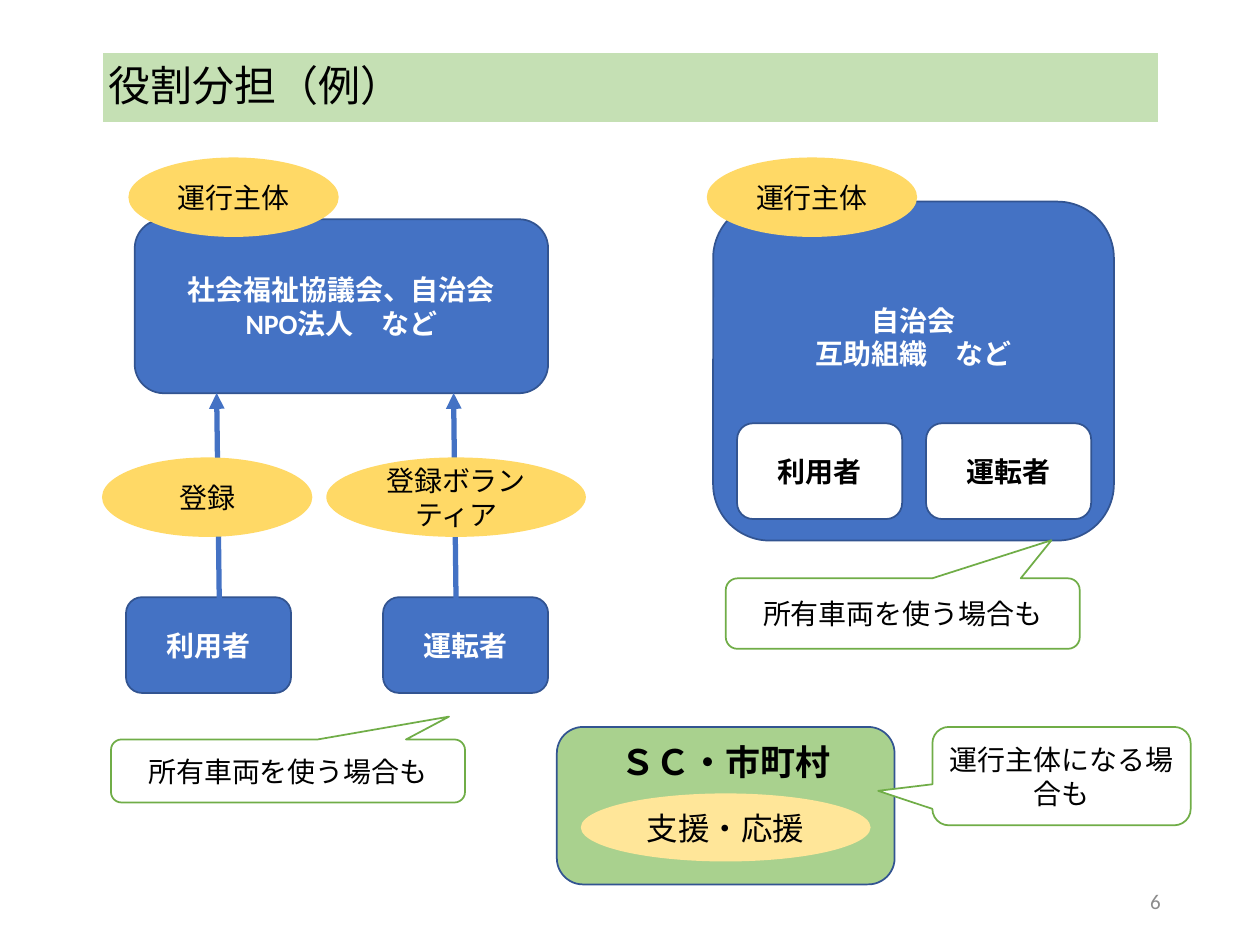
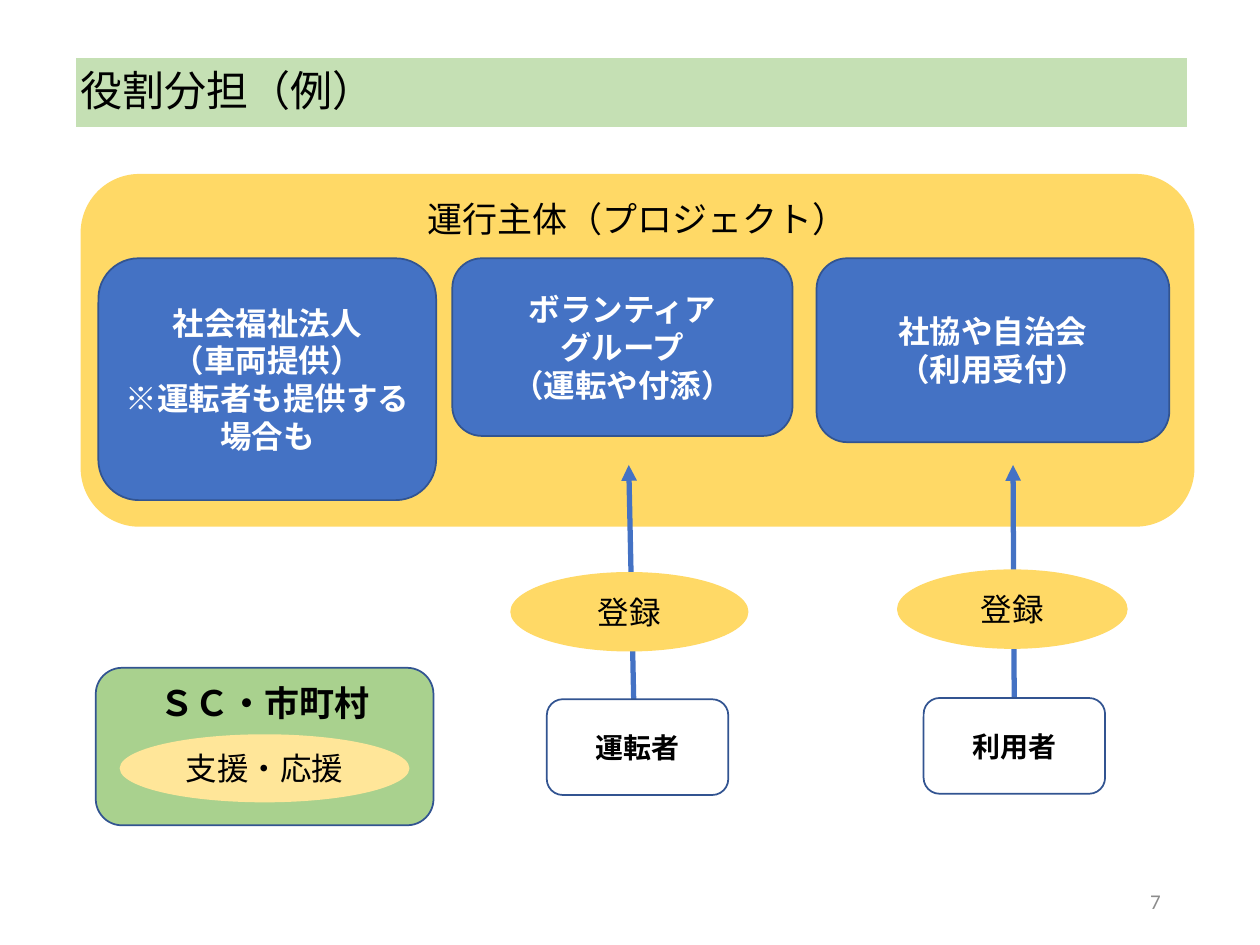
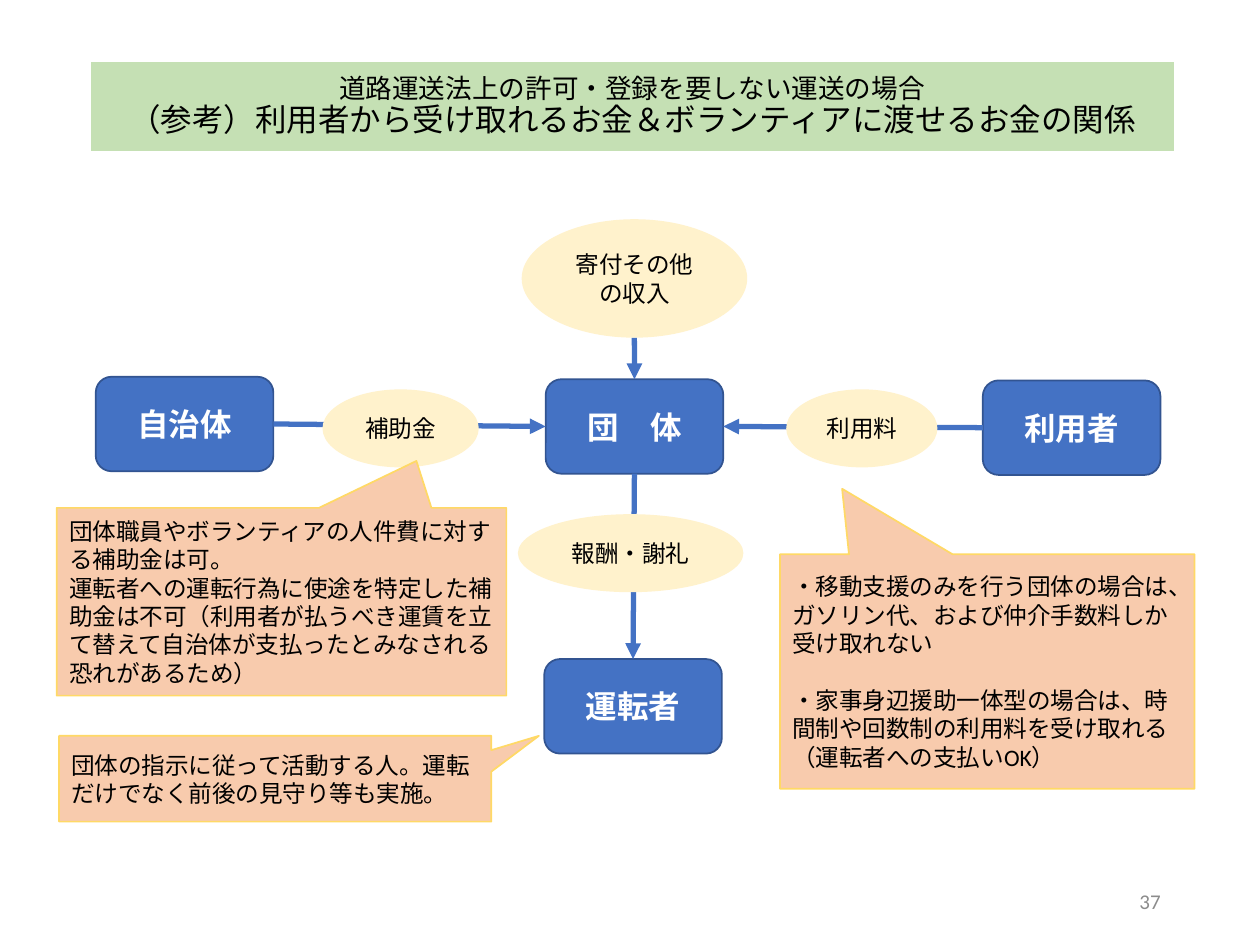
import dataclasses
import itertools
import typing

import lxml.etree
import pptx
import pptx.dml.color
import pptx.enum.lang
import pptx.enum.shapes
import pptx.enum.text
import pptx.oxml.ns
import pptx.util

Pt = pptx.util.Pt
Form = pptx.enum.shapes.MSO_SHAPE
Align = pptx.enum.text.PP_ALIGN
Anchor = pptx.enum.text.MSO_ANCHOR
Pair = tuple[float, float]


@dataclasses.dataclass(frozen=True)
class Look:
    form: typing.Optional[Form]
    fill: str = ""
    edge: str = ""
    weight: float = 1
    ink: str = "000000"
    bold: bool = False
    align: Align = Align.CENTER
    anchor: Anchor = Anchor.MIDDLE
    font: str = "Calibri"
    space: float = 1.0


@dataclasses.dataclass(frozen=True)
class Theme:
    blue: str = "4472C4"
    navy: str = "325491"
    mint: str = "C5E0B4"
    green: str = "A9D18E"
    leaf: str = "70AD47"
    gold: str = "FFD966"
    sand: str = "FFE699"
    cream: str = "FFF2CC"
    peach: str = "F8CBAD"
    white: str = "FFFFFF"
    gray: str = "8C8C8C"
    head: float = 24
    big: float = 20
    mid: float = 18
    sub: float = 15.2
    base: float = 16
    note: float = 13.5
    foot: float = 12
    arrow: float = 3
    face: str = "Noto Sans CJK JP"


T = Theme()
ROUND = Form.ROUNDED_RECTANGLE
BAND = Look(Form.RECTANGLE, T.mint, T.white, 1.5, align=Align.LEFT, font=T.face, space=0.9)
MID_BAND = dataclasses.replace(BAND, align=Align.CENTER)
FOOT = Look(None, ink=T.gray, align=Align.RIGHT)
BLUE = Look(ROUND, T.blue, T.navy, ink=T.white, bold=True)
WHITE = Look(ROUND, T.white, T.navy, bold=True)
GREEN = Look(ROUND, T.green, T.navy, bold=True, anchor=Anchor.TOP)
FIELD = Look(ROUND, T.gold, anchor=Anchor.TOP)
GOLD = Look(Form.OVAL, T.gold)
SAND = Look(Form.OVAL, T.sand)
CREAM = Look(Form.OVAL, T.cream)
BUBBLE = Look(Form.ROUNDED_RECTANGULAR_CALLOUT, T.white, T.leaf)
NOTE = Look(Form.RECTANGULAR_CALLOUT, T.peach, T.gold, align=Align.LEFT)

OVAL = (120.2, 45.4)
CARD = (94.3, 54.7)
SLOT = (103.7, 54.7)
NODE = (101.5, 54)
CAST = (193, 90)


@dataclasses.dataclass(frozen=True)
class Box:
    look: Look
    spot: Pair
    size: Pair
    text: str
    types: tuple[float, ...] = (T.base,)
    tip: tuple[float, ...] = ()
    pad: Pair = (7.2, 3.6)
    lift: float = 0
    gap: float = 0


@dataclasses.dataclass(frozen=True)
class Arrow:
    start: Pair
    end: Pair


def dress(item: typing.Any, vals: dict[str, typing.Any]) -> None:
    for key, val in vals.items():
        setattr(item, key, val)


def tint(code: str) -> pptx.dml.color.RGBColor:
    return pptx.dml.color.RGBColor.from_string(code)


def paint(shape: typing.Any, look: Look) -> None:
    shape.shadow.inherit = False
    shape.fill.solid()
    shape.fill.fore_color.rgb = tint(look.fill)
    if look.edge:
        shape.line.color.rgb = tint(look.edge)
        shape.line.width = Pt(look.weight)
    else:
        shape.line.fill.background()


def write(shape: typing.Any, box: Box) -> None:
    look = box.look
    frame = shape.text_frame
    side, rim = box.pad
    dress(frame, {
        "text": box.text,
        "word_wrap": True,
        "vertical_anchor": look.anchor,
        "margin_left": Pt(side),
        "margin_right": Pt(side),
        "margin_top": Pt(rim),
        "margin_bottom": Pt(rim + box.lift),
    })
    for row, (para, size) in enumerate(zip(frame.paragraphs, itertools.cycle(box.types))):
        dress(para, {
            "alignment": look.align,
            "line_spacing": look.space,
            "space_before": Pt(box.gap if row else 0),
        })
        for run in para.runs:
            run.font.color.rgb = tint(look.ink)
            dress(run.font, {
                "name": look.font,
                "size": Pt(size),
                "bold": look.bold,
                "language_id": pptx.enum.lang.MSO_LANGUAGE_ID.JAPANESE,
            })
            east = lxml.etree.SubElement(run._r.get_or_add_rPr(), pptx.oxml.ns.qn("a:ea"))
            east.set("typeface", look.font)


def draw(slide: typing.Any, box: Box) -> typing.Any:
    place = [Pt(val) for val in box.spot + box.size]
    if box.look.form is None:
        shape = slide.shapes.add_textbox(*place)
    else:
        shape = slide.shapes.add_shape(box.look.form, *place)
        paint(shape, box.look)
        for i, val in enumerate(box.tip):
            shape.adjustments[i] = val
    write(shape, box)
    return shape


def point(slide: typing.Any, arrow: Arrow) -> typing.Any:
    ends = [Pt(val) for val in arrow.start + arrow.end]
    link = slide.shapes.add_connector(pptx.enum.shapes.MSO_CONNECTOR.STRAIGHT, *ends)
    link.line.color.rgb = tint(T.blue)
    link.line.width = Pt(T.arrow)
    tail = lxml.etree.SubElement(link.line._get_or_add_ln(), pptx.oxml.ns.qn("a:tailEnd"))
    tail.set("type", "triangle")
    lxml.etree.SubElement(link._element.spPr, pptx.oxml.ns.qn("a:effectLst"))
    return link


def join(slide: typing.Any, first: typing.Any, out: int, last: typing.Any, into: int) -> None:
    link = point(slide, Arrow((0, 0), (0, 0)))
    link.begin_connect(first, out)
    link.end_connect(last, into)


def render(slide: typing.Any, parts: list[Box | Arrow]) -> None:
    for part in parts:
        if isinstance(part, Arrow):
            point(slide, part)
        else:
            draw(slide, part)


def open_page(deck: typing.Any, band: Box, number: int) -> typing.Any:
    slide = deck.slides.add_slide(deck.slide_layouts[6])
    draw(slide, band)
    draw(slide, Box(FOOT, (508.3, 500.4), (162, 28.8), str(number), (T.foot,)))
    return slide


def role_band(spot: Pair, width: float) -> Box:
    return Box(BAND, spot, (width, 41), "役割分担（例）", (T.head,), pad=(3.6, 1.4))


def support(left: float, top: float) -> list[Box]:
    return [
        Box(GREEN, (left, top), CAST, "ＳＣ・市町村", (T.big,)),
        Box(SAND, (left + 13.7, top + 38), (165.6, 38.9), "支援・応援", (T.mid,)),
    ]


def build_roles(deck: typing.Any) -> None:
    slide = open_page(deck, role_band((58.3, 29.5), 604), 6)
    owner, own_car = "運行主体", "所有車両を使う場合も"
    render(slide, [
        Box(BLUE, (77, 125.3), (236.2, 99.4), "社会福祉協議会、自治会\nNPO法人　など"),
        Box(GOLD, (73.4, 90), OVAL, owner),
        Box(BLUE, (218.9, 341.3), CARD, "運転者"),
        Box(BLUE, (72, 341.3), CARD, "利用者"),
        Arrow((260.6, 342.7), (259.2, 224.6)),
        Arrow((125.3, 342.7), (123.8, 224.6)),
        Box(GOLD, (58.3, 261.4), OVAL, "登録"),
        Box(GOLD, (186.5, 261.4), (148.3, 45.4), "登録ボランティア"),
        Box(BLUE, (407.5, 115.2), (229, 193.7), "自治会\n互助組織　など", lift=39),
        Box(GOLD, (403.9, 90), OVAL, owner),
        Box(WHITE, (529.2, 241.9), CARD, "運転者"),
        Box(WHITE, (421.2, 241.9), CARD, "利用者"),
        Box(BUBBLE, (63.4, 422.6), (202.3, 36), own_car, tip=(0.455, -0.863)),
        Box(BUBBLE, (414.7, 330.5), (202.3, 40.3), own_car, tip=(0.42, -1.04)),
        *support(318.2, 415.4),
        Box(BUBBLE, (532.8, 415.4), (147.6, 56.2), "運行主体になる場合も", tip=(-0.71, 0.15)),
    ])


def build_project(deck: typing.Any) -> None:
    slide = open_page(deck, role_band((42.5, 32.4), 636.5), 7)
    top, mid = 147.6, (T.mid,)
    render(slide, [
        Box(FIELD, (46.1, 99.4), (636.5, 201.6), "運行主体（プロジェクト）", (T.big,)),
        Box(BLUE, (56.2, top), (193, 138.2),
            "社会福祉法人\n（車両提供）\n※運転者も提供する場合も", mid),
        Box(BLUE, (258.5, top), (194.4, 101.5), "ボランティア\nグループ\n（運転や付添）", mid),
        Box(BLUE, (466.6, top), (201.6, 105.1), "社協や自治会\n（利用受付）", mid),
        Arrow((579.6, 407.5), (578.9, 265.7)),
        Box(GOLD, (512.6, 325.4), (131.8, 45.4), "登録", mid),
        Box(WHITE, (527.8, 398.9), SLOT, "利用者"),
        Arrow((362.2, 403.2), (359.3, 265.7)),
        Box(GOLD, (291.6, 326.9), (136.1, 45.4), "登録", mid),
        Box(WHITE, (312.5, 399.6), SLOT, "運転者"),
        *support(54.7, 381.6),
    ])


def build_money(deck: typing.Any) -> None:
    band = Box(
        MID_BAND, (51.1, 34.6), (620.6, 52.6),
        "道路運送法上の許可・登録を要しない運送の場合\n"
        "（参考）利用者から受け取れるお金＆ボランティアに渡せるお金の関係",
        (T.sub, T.mid), pad=(4.3, 2.2),
    )
    slide = open_page(deck, band, 37)
    note = (T.note,)
    group, town, rider, driver = (
        draw(slide, Box(BLUE, spot, NODE, text, (T.mid,)))
        for spot, text in (
            ((311.8, 216.7), "団　体"),
            ((54.7, 215.3), "自治体"),
            ((561.6, 217.4), "利用者"),
            ((311, 376.6), "運転者"),
        )
    )
    join(slide, town, 3, group, 1)
    join(slide, rider, 1, group, 3)
    join(slide, group, 2, driver, 0)
    gift = point(slide, Arrow((362.5, 193), (362.5, 216.7)))
    gift.end_connect(group, 0)
    render(slide, [
        Box(CREAM, (298.1, 125.3), (128.9, 67.7), "寄付その他の収入", note),
        Box(CREAM, (295.9, 293.8), (128.9, 44.6), "報酬・謝礼", note),
        Box(CREAM, (184.3, 222.5), (89.3, 44.6), "補助金", note),
        Box(CREAM, (449.3, 222.5), (86.4, 44.6), "利用料", note),
        Box(NOTE, (445.7, 316.8), (236.9, 133.9),
            "・移動支援のみを行う団体の場合は、ガソリン代、および仲介手数料しか受け取れない\n"
            "・家事身辺援助一体型の場合は、時間制や回数制の利用料を受け取れる"
            "（運転者への支払いOK）", note, tip=(-0.35, -0.78), gap=16.5),
        Box(NOTE, (33.8, 420.5), (247, 49),
            "団体の指示に従って活動する人。運転だけでなく前後の見守り等も実施。",
            note, tip=(0.61, -0.5)),
        Box(NOTE, (32.4, 290.2), (257, 107.3),
            "団体職員やボランティアの人件費に対する補助金は可。\n"
            "運転者への運転行為に使途を特定した補助金は不可（利用者が払うべき運賃を"
            "立て替えて自治体が支払ったとみなされる恐れがあるため）",
            note, tip=(0.3, -0.75)),
    ])


def main() -> None:
    deck = pptx.Presentation()
    dress(deck, {"slide_width": Pt(720), "slide_height": Pt(540)})
    for build in (build_roles, build_project, build_money):
        build(deck)
    deck.save("out.pptx")


if __name__ == "__main__":
    main()
